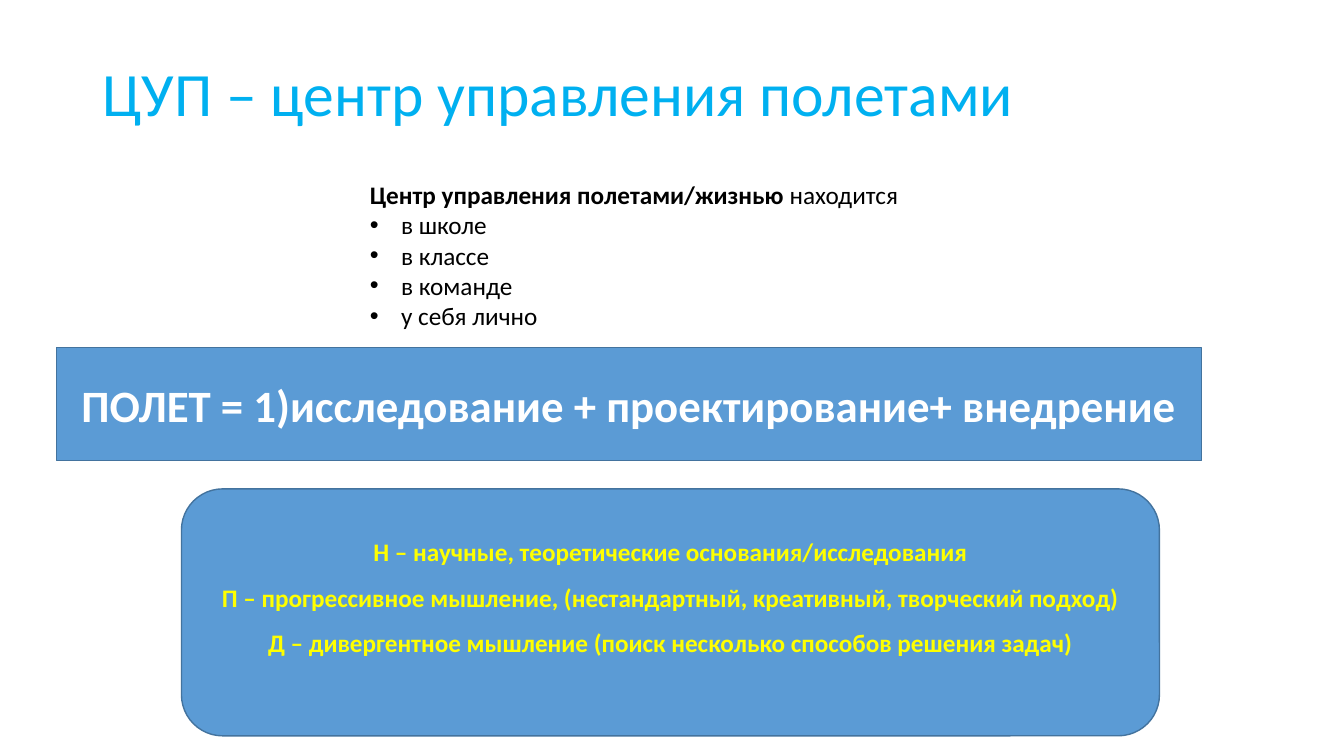
from dataclasses import dataclass

from lxml import etree
from pptx import Presentation
from pptx.dml.color import RGBColor
from pptx.enum.shapes import MSO_SHAPE as Preset
from pptx.enum.text import MSO_ANCHOR as Anchor, PP_ALIGN as Align
from pptx.oxml.ns import qn
from pptx.slide import Slide
from pptx.text.text import TextFrame
from pptx.util import Inches, Pt

FONT = "Calibri"
SKY = RGBColor(0x00, 0xB0, 0xF0)
BLACK = RGBColor(0x00, 0x00, 0x00)
WHITE = RGBColor(0xFF, 0xFF, 0xFF)
YELLOW = RGBColor(0xFF, 0xFF, 0x00)
BLUE = RGBColor(0x5B, 0x9B, 0xD5)
DARK_BLUE = RGBColor(0x43, 0x73, 0x9E)

TITLE = "ЦУП – центр управления полетами"
PLACES = ["в школе", "в классе", "в команде", "у себя лично"]


@dataclass
class Panel:
    preset: Preset
    left: float
    top: float
    width: float
    height: float
    lines: list[str]
    size: int
    color: RGBColor
    spacing: float = 1.0
    bottom_inset: float = 0.05


PANELS = [
    Panel(Preset.RECTANGLE, 0.56, 3.45, 11.36, 1.12,
          ["ПОЛЕТ = 1)исследование + проектирование+ внедрение"], 32, WHITE),
    Panel(Preset.ROUNDED_RECTANGLE, 1.8, 4.85, 9.7, 2.45,
          ["Н – научные, теоретические основания/исследования",
           "П – прогрессивное мышление, (нестандартный, креативный, творческий подход)",
           "Д – дивергентное мышление (поиск несколько способов решения задач)"],
          18, YELLOW, spacing=1.5, bottom_inset=0.5),
]


def write(frame: TextFrame, *spans: tuple[str, bool], size: int, color: RGBColor,
          align: Align = Align.LEFT, spacing: float = 1.0, bullet: bool = False) -> None:
    """Add a paragraph of (text, bold) spans, filling the empty first one."""
    para = frame.paragraphs[0]
    if para.runs:
        para = frame.add_paragraph()
    para.alignment = align
    para.line_spacing = spacing
    if bullet:
        props = para._p.get_or_add_pPr()
        props.set("marL", str(Inches(0.31)))
        props.set("indent", str(-Inches(0.31)))
        etree.SubElement(props, qn("a:buFont")).set("typeface", "Arial")
        etree.SubElement(props, qn("a:buChar")).set("char", "•")
    for text, bold in spans:
        span = para.add_run()
        span.text = text
        span.font.name = FONT
        span.font.size = Pt(size)
        span.font.bold = bold
        span.font.color.rgb = color


def add_title(page: Slide) -> None:
    title = page.shapes.title
    title.left, title.top = Inches(0.92), Inches(0.4)
    title.width, title.height = Inches(11.5), Inches(1.12)
    title.text_frame.vertical_anchor = Anchor.MIDDLE
    write(title.text_frame, (TITLE, False), size=44, color=SKY, spacing=0.9)


def add_places(page: Slide) -> None:
    box = page.shapes.add_textbox(Inches(3.57), Inches(1.73), Inches(6.66), Inches(1.62))
    frame = box.text_frame
    frame.word_wrap = True
    write(frame, ("Центр управления полетами/жизнью ", True), ("находится", False),
          size=18, color=BLACK)
    for place in PLACES:
        write(frame, (place, False), size=18, color=BLACK, bullet=True)


def add_panel(page: Slide, panel: Panel) -> None:
    shape = page.shapes.add_shape(panel.preset, Inches(panel.left), Inches(panel.top),
                                  Inches(panel.width), Inches(panel.height))
    shape.shadow.inherit = False
    shape.fill.solid()
    shape.fill.fore_color.rgb = BLUE
    shape.line.color.rgb = DARK_BLUE
    shape.line.width = Pt(1)
    frame = shape.text_frame
    frame.word_wrap = True
    frame.vertical_anchor = Anchor.MIDDLE
    frame.margin_bottom = Inches(panel.bottom_inset)
    for line in panel.lines:
        write(frame, (line, True), size=panel.size, color=panel.color,
              align=Align.CENTER, spacing=panel.spacing)


def main() -> None:
    deck = Presentation()
    deck.slide_width, deck.slide_height = Inches(13.33), Inches(7.5)
    page = deck.slides.add_slide(deck.slide_layouts[5])
    add_title(page)
    add_places(page)
    for panel in PANELS:
        add_panel(page, panel)
    deck.save("out.pptx")


if __name__ == "__main__":
    main()
